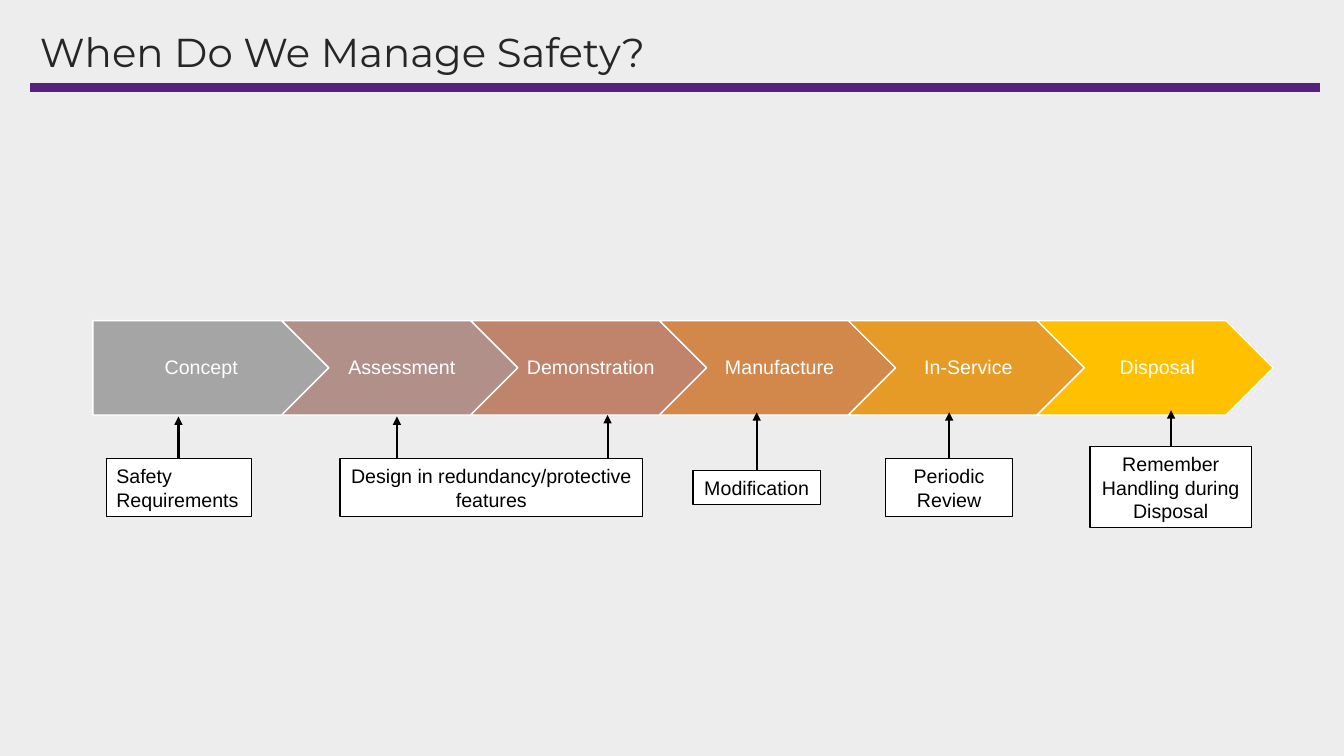
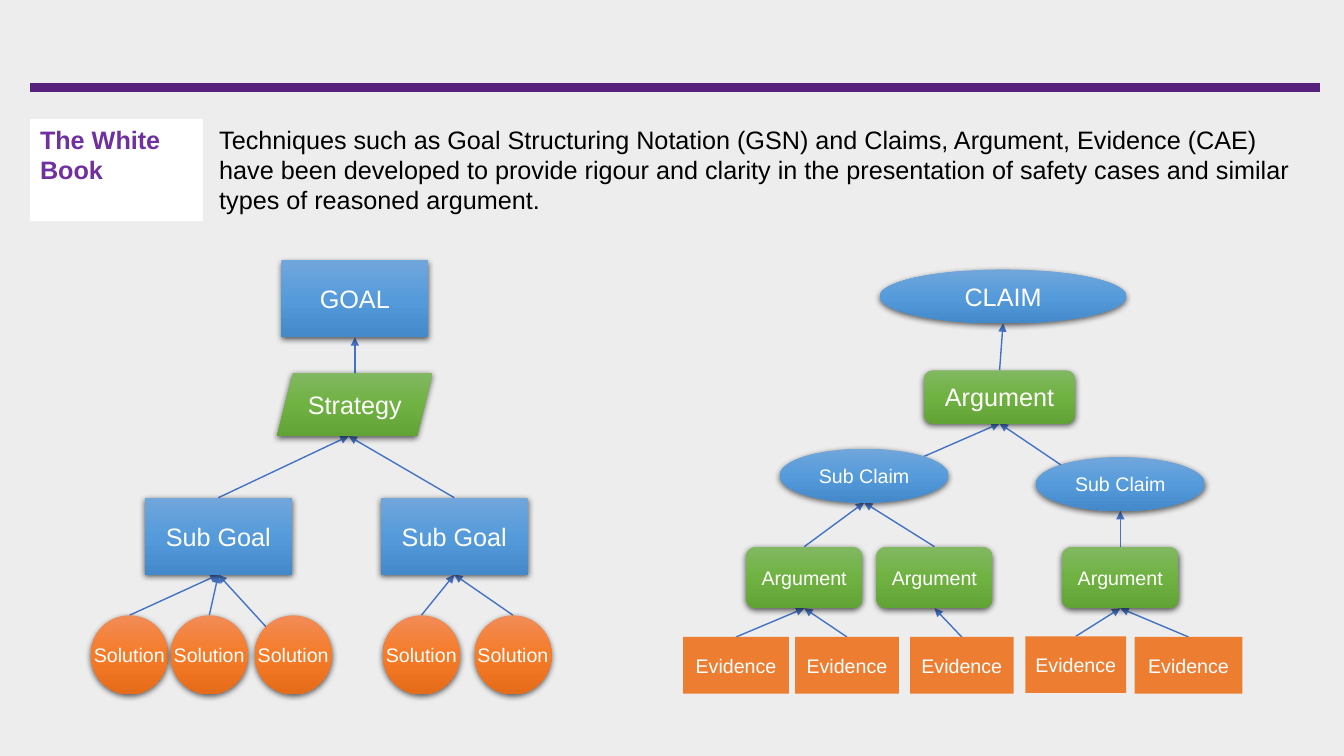
from copy import deepcopy

from lxml import etree
from pptx import Presentation
from pptx.dml.color import RGBColor
from pptx.enum import shapes, text
from pptx.oxml import ns
from pptx.util import Pt


class Theme:
    background = "EDEDED"
    band = "56227D"
    heading = "262626"
    accent = "7030A0"
    black = "000000"
    white = "FFFFFF"
    arrow = "4472C4"
    evidence = "ED7D31"
    blue = ("71A6DB", "559BDB", "448ACA")
    green = ("81B861", "6FB242", "62A336")
    orange = ("F18C57", "F67B28", "E56C19")
    phases = ("A5A5A5", "B1908A", "C0846C", "D2884B", "E69B27", "FFC000")
    title_font = "Montserrat"
    font = "Arial"
    title_size = 28.8
    large = 18
    small = 14


PRESET = shapes.MSO_SHAPE
ALIGN = text.PP_ALIGN
ANCHOR = text.MSO_ANCHOR


def add_box(slide, preset, at, label, size, color=Theme.white, fill=None, line=None,
            align=ALIGN.CENTER, anchor=ANCHOR.MIDDLE, font=Theme.font, bold=False,
            wrap=True, spacing=None):
    """Add a labelled shape, or a text box if preset is None; a tuple fill is a shaded gradient."""
    frame = [Pt(length) for length in at]
    if preset is None:
        shape = slide.shapes.add_textbox(*frame)
    else:
        shape = slide.shapes.add_shape(preset, *frame)
        shape.shadow.inherit = False
        if line:
            shape.line.color.rgb = RGBColor.from_string(line)
            shape.line.width = Pt(1)
        else:
            shape.line.fill.background()
    if isinstance(fill, tuple):
        shape.fill.gradient()
        shape.fill.gradient_angle = 270
        stops = shape.element.spPr.find(ns.qn("a:gradFill")).find(ns.qn("a:gsLst"))
        stops.append(deepcopy(stops[0]))
        for index, stop in enumerate(shape.fill.gradient_stops):
            stop.position = index / 2
            stop.color.rgb = RGBColor.from_string(fill[index])
        effects = shape.element.spPr.find(ns.qn("a:effectLst"))
        shadow = etree.SubElement(effects, ns.qn("a:outerShdw"), blurRad=str(Pt(4.5)),
                                  dist=str(Pt(1.5)), dir="5400000", rotWithShape="0")
        shade = etree.SubElement(shadow, ns.qn("a:srgbClr"), val=Theme.black)
        etree.SubElement(shade, ns.qn("a:alpha"), val="63000")
    elif fill:
        shape.fill.solid()
        shape.fill.fore_color.rgb = RGBColor.from_string(fill)

    shape.text_frame.word_wrap = wrap
    shape.text_frame.vertical_anchor = anchor
    paragraph = shape.text_frame.paragraphs[0]
    paragraph.alignment = align
    if spacing:
        paragraph.line_spacing = spacing
    run = paragraph.add_run()
    run.text = label
    run.font.name = font
    run.font.size = Pt(size)
    run.font.bold = bold
    run.font.color.rgb = RGBColor.from_string(color)
    return shape


def add_line(slide, start, end, color, width, arrow=True):
    connector = slide.shapes.add_connector(
        shapes.MSO_CONNECTOR.STRAIGHT, *[Pt(length) for length in (*start, *end)])
    connector.line.color.rgb = RGBColor.from_string(color)
    connector.line.width = Pt(width)
    if arrow:
        etree.SubElement(connector.line._get_or_add_ln(), ns.qn("a:tailEnd"), type="triangle")
    etree.SubElement(connector.element.spPr, ns.qn("a:effectLst"))
    return connector


presentation = Presentation()
presentation.slide_width = Pt(960)
presentation.slide_height = Pt(540)
blank = presentation.slide_layouts[6]
lifecycle = presentation.slides.add_slide(blank)
notations = presentation.slides.add_slide(blank)

# Shared background and band
background = presentation.slide_master.background.fill
background.solid()
background.fore_color.rgb = RGBColor.from_string(Theme.background)
band = add_line(lifecycle, (21.5, 62.5), (943, 62.5), Theme.band, 6, arrow=False)
blank.shapes.element.append(band.element)

# Slide 1: life cycle phases
add_box(lifecycle, None, (21.5, 20, 921.5, 38), "When Do We Manage Safety?", Theme.title_size,
        Theme.heading, align=ALIGN.LEFT, font=Theme.title_font, spacing=0.9)

phases = ["Concept", "Assessment", "Demonstration", "Manufacture", "In-Service", "Disposal"]
phase_width, phase_pitch = 168.6, 134.9
for index, phase in enumerate(phases):
    shape = add_box(lifecycle, PRESET.CHEVRON if index else PRESET.PENTAGON,
                    (66.4 + index * phase_pitch, 229, phase_width, 67.4), phase, Theme.small,
                    fill=Theme.phases[index], line=Theme.white, spacing=0.9)
    shape.text_frame.margin_left = Pt(4.5)
    shape.text_frame.margin_right = Pt(1.5)

# Each activity: label, box, alignment, arrow tips
activities = [
    ("Safety Requirements", (76, 327.5, 103.5, 41.5), ALIGN.LEFT, [(127.5, 297.5)]),
    ("Design in redundancy/protective features", (243, 327.5, 216, 41.5), ALIGN.CENTER,
     [(283.5, 297.5), (434, 296.5)]),
    ("Modification", (495, 336, 91, 24.5), ALIGN.CENTER, [(540.5, 294.5)]),
    ("Periodic Review", (632.5, 327.5, 91, 41.5), ALIGN.CENTER, [(678, 294.5)]),
    ("Remember Handling during Disposal", (778.5, 319, 115.5, 58), ALIGN.CENTER,
     [(836.5, 293)]),
]
for label, at, align, tips in activities:
    add_box(lifecycle, PRESET.RECTANGLE, at, label, Theme.small, Theme.black,
            fill=Theme.white, line=Theme.black, align=align)
    for x, y in tips:
        add_line(lifecycle, (x, at[1]), (x, y), Theme.black, 1.5)

# Slide 2: goal structure and claim structure
add_box(notations, PRESET.RECTANGLE, (21.5, 85, 123.5, 73), "The White Book", Theme.large,
        Theme.accent, fill=Theme.white, align=ALIGN.LEFT, anchor=ANCHOR.TOP, bold=True)
add_box(notations, None, (149.5, 85, 793.5, 73),
        "Techniques such as Goal Structuring Notation (GSN) and Claims, Argument, Evidence (CAE) "
        "have been developed to provide rigour and clarity in the presentation of safety cases "
        "and similar types of reasoned argument.",
        Theme.large, Theme.black, align=ALIGN.LEFT, anchor=ANCHOR.TOP)

# Each kind: label, preset, fill, text size, height
kinds = {
    "goal": ("GOAL", PRESET.RECTANGLE, Theme.blue, Theme.large, 55),
    "strategy": ("Strategy", PRESET.PARALLELOGRAM, Theme.green, Theme.large, 45),
    "sub goal": ("Sub Goal", PRESET.RECTANGLE, Theme.blue, Theme.large, 55),
    "solution": ("Solution", PRESET.OVAL, Theme.orange, Theme.small, 56.5),
    "claim": ("CLAIM", PRESET.OVAL, Theme.blue, Theme.large, 38.5),
    "main argument": ("Argument", PRESET.ROUNDED_RECTANGLE, Theme.green, Theme.large, 38),
    "sub claim": ("Sub Claim", PRESET.OVAL, Theme.blue, Theme.small, 38.5),
    "argument": ("Argument", PRESET.ROUNDED_RECTANGLE, Theme.green, Theme.small, 44),
    "evidence": ("Evidence", PRESET.RECTANGLE, Theme.evidence, Theme.small, 40.5),
}
# Where an arrow leaves a node and reaches its parent, as fractions of the node's size
top, top_left, top_right = (0.5, 0), (0.15, 0.15), (0.85, 0.15)
feet = {"strategy": 0.46}

# Each node: kind, left, top, width, parent, point the arrow leaves from
nodes = {
    "goal": ("goal", 201, 186, 105, None, top),
    "strategy": ("strategy", 198, 266.5, 111, "goal", top),
    "sub goal 1": ("sub goal", 103.5, 355.5, 105, "strategy", top),
    "sub goal 2": ("sub goal", 272, 355.5, 105, "strategy", top),
    "solution 1": ("solution", 65, 439.5, 55, "sub goal 1", top),
    "solution 2": ("solution", 122, 439.5, 55, "sub goal 1", top),
    "solution 3": ("solution", 182, 439.5, 55, "sub goal 1", top_left),
    "solution 4": ("solution", 273.5, 439.5, 55, "sub goal 2", top),
    "solution 5": ("solution", 339, 439.5, 55, "sub goal 2", top),
    "claim": ("claim", 628.5, 192.5, 176, None, top),
    "main argument": ("main argument", 660, 264.5, 108, "claim", top),
    "sub claim 1": ("sub claim", 557, 320.5, 120.5, "main argument", top_right),
    "sub claim 2": ("sub claim", 740, 326.5, 120.5, "main argument", top_left),
    "argument 1": ("argument", 533, 390.5, 83, "sub claim 1", top),
    "argument 2": ("argument", 626, 390.5, 83, "sub claim 1", top),
    "argument 3": ("argument", 758.5, 390.5, 83.5, "sub claim 2", top),
    "evidence 1": ("evidence", 488, 455, 75.5, "argument 1", top),
    "evidence 2": ("evidence", 568, 455, 74, "argument 1", top),
    "evidence 3": ("evidence", 650, 455, 74, "argument 2", top),
    "evidence 4": ("evidence", 732.5, 454.5, 72, "argument 3", top),
    "evidence 5": ("evidence", 810.5, 455, 77, "argument 3", top),
}
for kind, x, y, width, parent, leave in nodes.values():
    if parent:
        parent_kind, parent_x, parent_y, parent_width = nodes[parent][:4]
        start = (x + leave[0] * width, y + leave[1] * kinds[kind][-1])
        end = (parent_x + feet.get(parent, 0.5) * parent_width,
               parent_y + kinds[parent_kind][-1])
        add_line(notations, start, end, Theme.arrow, 1)
for kind, x, y, width, parent, leave in nodes.values():
    label, preset, fill, size, height = kinds[kind]
    add_box(notations, preset, (x, y, width, height), label, size, fill=fill, wrap=False)

presentation.save("out.pptx")
